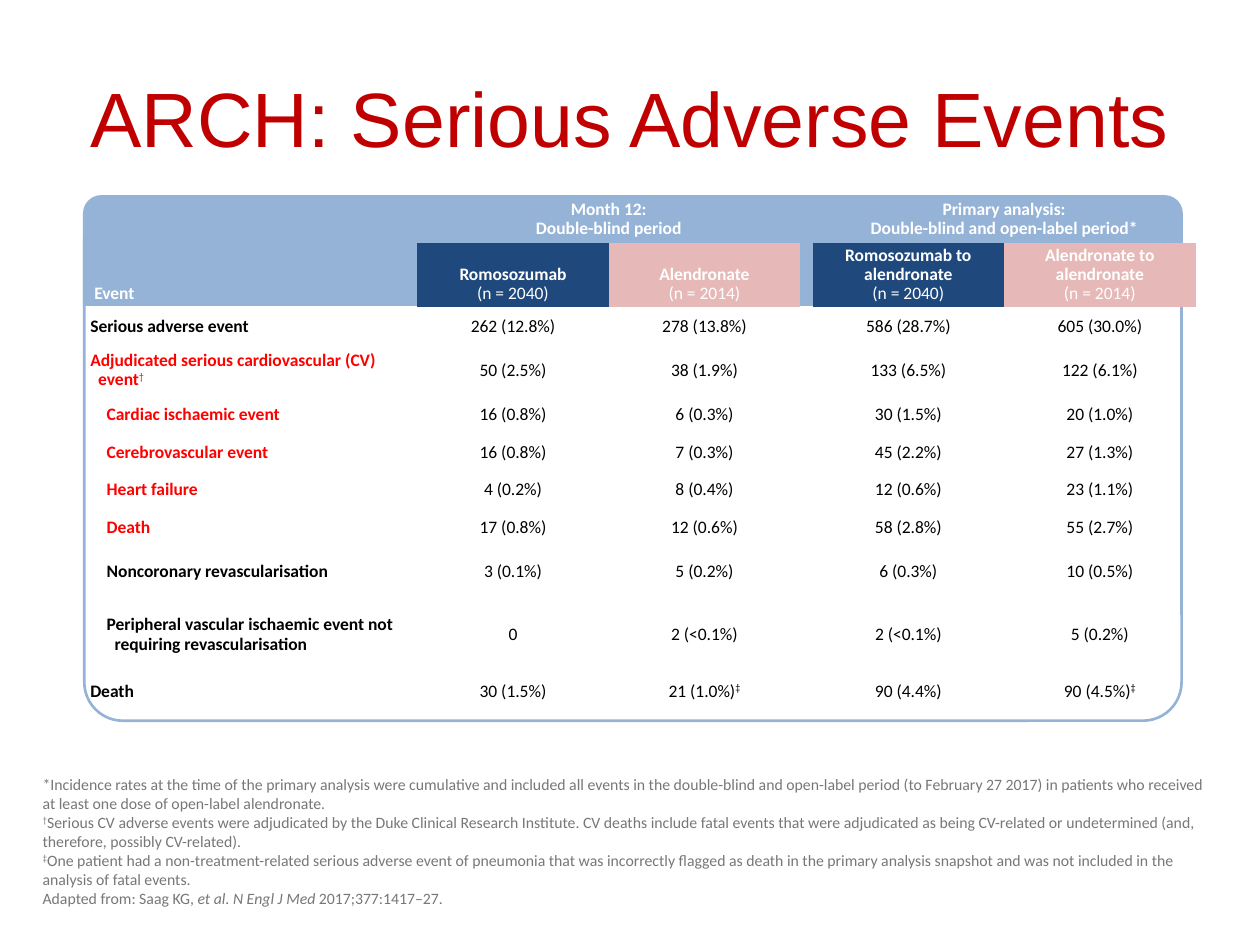
from itertools import groupby
from lxml.etree import SubElement
from pptx import Presentation
from pptx.dml.color import RGBColor
from pptx.enum.shapes import MSO_SHAPE as SHAPE
from pptx.enum.text import MSO_ANCHOR as ANCHOR, PP_ALIGN as ALIGN
from pptx.oxml.ns import qn
from pptx.util import Cm, Pt

COLORS = {
    "title": "C00000", "frame": "95B3D7", "romo": "1F497D", "alen": "E6B9B8",
    "white": "FFFFFF", "black": "000000", "red": "FF0000", "note": "777777",
}
NO_STYLE = "{2D5ABB26-0587-4C30-8999-92F81FD0307C}"
COL_WIDTHS = [6.76, 3.86, 3.86, 0.25, 3.86, 3.86]
ROW_HEIGHTS = [0.93, 1.3, 0.76, 1.02, 0.76, 0.76, 0.76, 0.76, 1.02, 1.52, 0.76]
VALUE_COLS = [1, 2, 4, 5]
PERIODS = [
    (1, "Month 12:\nDouble-blind period"),
    (4, "Primary analysis:\nDouble-blind and open-label period*"),
]
ARMS = [
    (["Romosozumab"], "(n = 2040)", "romo"),
    (["Alendronate"], "(n = 2014)", "alen"),
    (["Romosozumab to", "alendronate"], "(n = 2040)", "romo"),
    (["Alendronate to", "alendronate"], "(n = 2014)", "alen"),
]
EVENTS = [
    ("Serious adverse event", "black", 0, False,
     ["262 (12.8%)", "278 (13.8%)", "586 (28.7%)", "605 (30.0%)"]),
    ("Adjudicated serious cardiovascular (CV) event†", "red", 0, True,
     ["50 (2.5%)", "38 (1.9%)", "133 (6.5%)", "122 (6.1%)"]),
    ("Cardiac ischaemic event", "red", 1, False,
     ["16 (0.8%)", "6 (0.3%)", "30 (1.5%)", "20 (1.0%)"]),
    ("Cerebrovascular event", "red", 1, False,
     ["16 (0.8%)", "7 (0.3%)", "45 (2.2%)", "27 (1.3%)"]),
    ("Heart failure", "red", 1, False,
     ["4 (0.2%)", "8 (0.4%)", "12 (0.6%)", "23 (1.1%)"]),
    ("Death", "red", 1, False,
     ["17 (0.8%)", "12 (0.6%)", "58 (2.8%)", "55 (2.7%)"]),
    ("Noncoronary revascularisation", "black", 1, True,
     ["3 (0.1%)", "5 (0.2%)", "6 (0.3%)", "10 (0.5%)"]),
    ("Peripheral vascular ischaemic event not requiring revascularisation",
     "black", 1, True, ["0", "2 (<0.1%)", "2 (<0.1%)", "5 (0.2%)"]),
    ("Death", "black", 0, False,
     ["30 (1.5%)", "21 (1.0%)‡", "90 (4.4%)", "90 (4.5%)‡"]),
]
NOTES = (
    "*Incidence rates at the time of the primary analysis were cumulative and included all events "
    "in the double-blind and open-label period (to February 27 2017) in patients who received "
    "at least one dose of open-label alendronate.\n"
    "†Serious CV adverse events were adjudicated by the Duke Clinical Research Institute. "
    "CV deaths include fatal events that were adjudicated as being CV-related or undetermined "
    "(and, therefore, possibly CV-related).\n"
    "‡One patient had a non-treatment-related serious adverse event of pneumonia that was "
    "incorrectly flagged as death in the primary analysis snapshot and was not included in the "
    "analysis of fatal events."
)
CITATION = [("Adapted from: Saag KG, ", False), ("et al. N Engl J Med", True),
            (" 2017;377:1417–27.", False)]


def rgb(name):
    """Return the named colour."""
    return RGBColor.from_string(COLORS[name])


def add_run(p, text, size, color, bold=False, italic=False, font="Calibri"):
    """Add one formatted run to a paragraph."""
    r = p.add_run()
    r.text = text
    r.font.name, r.font.size = font, Pt(size)
    r.font.bold, r.font.italic = bold, italic
    r.font.color.rgb = rgb(color)
    return r


def add_text(p, text, size, color, bold=False):
    """Add text with line breaks and raised footnote marks."""
    for i, line in enumerate(text.split("\n")):
        if i:
            p.add_line_break()
        for is_mark, chars in groupby(line, key=lambda c: c in "†‡"):
            r = add_run(p, "".join(chars), size, color, bold and not is_mark)
            if is_mark:
                r.font._element.set("baseline", "30000")


def add_frame(s, kind, top, height, radius, filled):
    """Add a rounded panel of the table's frame."""
    sp = s.shapes.add_shape(kind, Cm(1.7), Cm(top), Cm(22.12), Cm(height))
    sp.shadow.inherit = False
    sp.adjustments[0] = radius
    sp.line.color.rgb = rgb("frame")
    sp.line.width = Pt(1.5)
    if filled:
        sp.fill.solid()
        sp.fill.fore_color.rgb = rgb("frame")
    else:
        sp.fill.background()


def set_margins(cell, left, right, vertical):
    """Set the inner margins of a cell in centimetres."""
    cell.margin_left, cell.margin_right = Cm(left), Cm(right)
    cell.margin_top = cell.margin_bottom = Cm(vertical)


def fill_cell(cell, lines, color, align=ALIGN.CENTER, header=False, left=0.17, hanging=False):
    """Write (text, bold) lines into a cell."""
    cell.vertical_anchor = ANCHOR.BOTTOM if header else ANCHOR.MIDDLE
    set_margins(cell, *((0.25, 0.25, 0.08) if header else (left, 0.17, 0)))
    tf = cell.text_frame
    for i, (text, bold) in enumerate(lines):
        p = tf.add_paragraph() if i else tf.paragraphs[0]
        p.alignment, p.line_spacing = align, 0.9
        if hanging:
            pPr = p._p.get_or_add_pPr()
            pPr.set("marL", str(Cm(0.16)))
            pPr.set("indent", str(-Cm(0.16)))
        add_text(p, text, 10, color, bold)


def add_event_table(s):
    """Add the table of adverse events."""
    frame = s.shapes.add_table(len(ROW_HEIGHTS), len(COL_WIDTHS), Cm(1.65), Cm(3.96),
                               Cm(sum(COL_WIDTHS)), Cm(sum(ROW_HEIGHTS)))
    table = frame.table
    table.first_row = table.horz_banding = False
    table._tbl.tblPr.find(qn("a:tableStyleId")).text = NO_STYLE
    for col, width in zip(table.columns, COL_WIDTHS):
        col.width = Cm(width)
    for row, height in zip(table.rows, ROW_HEIGHTS):
        row.height = Cm(height)
    for cell in table.iter_cells():
        cell.fill.background()

    table.cell(0, 0).merge(table.cell(1, 0))
    fill_cell(table.cell(0, 0), [("Event", True)], "white", ALIGN.LEFT, header=True)
    for col, text in PERIODS:
        table.cell(0, col).merge(table.cell(0, col + 1))
        fill_cell(table.cell(0, col), [(text, True)], "white", header=True)
    for col, (names, count, color) in zip(VALUE_COLS, ARMS):
        cell = table.cell(1, col)
        cell.fill.solid()
        cell.fill.fore_color.rgb = rgb(color)
        fill_cell(cell, [(name, True) for name in names] + [(count, False)], "white", header=True)

    for row, (label, color, level, hanging, values) in enumerate(EVENTS, 2):
        fill_cell(table.cell(row, 0), [(label, True)], color, ALIGN.LEFT,
                  left=0.5 if level else 0.17, hanging=hanging)
        for col, value in zip(VALUE_COLS, values):
            fill_cell(table.cell(row, col), [(value, False)], "black")

    for cell in table.iter_cells():
        if not cell.text_frame.text:
            set_margins(cell, 0, 0, 0)
            SubElement(cell.text_frame.paragraphs[0]._p, qn("a:endParaRPr"), sz="1000")


def add_title(s, text):
    """Place and format the title."""
    sp = s.shapes.title
    sp.left, sp.top, sp.width, sp.height = Cm(1.27), Cm(0.76), Cm(22.86), Cm(3.18)
    tf = sp.text_frame
    tf.vertical_anchor = ANCHOR.MIDDLE
    p = tf.paragraphs[0]
    p.alignment = ALIGN.CENTER
    add_run(p, text, 44, "title", font="Arial")


def add_notes(s):
    """Add the footnotes and the citation."""
    tf = s.shapes.add_textbox(Cm(0.61), Cm(15.6), Cm(23.98), Cm(2.82)).text_frame
    tf.word_wrap = True
    tf.vertical_anchor = ANCHOR.BOTTOM
    add_text(tf.paragraphs[0], NOTES, 9, "note")
    p = tf.add_paragraph()
    for text, italic in CITATION:
        add_run(p, text, 9, "note", italic=italic)


def main():
    """Build and save the slide."""
    prs = Presentation()
    prs.slide_width, prs.slide_height = Cm(25.4), Cm(19.05)
    s = prs.slides.add_slide(prs.slide_layouts[5])
    add_frame(s, SHAPE.ROUND_2_SAME_RECTANGLE, 3.96, 2.18, 0.157, True)
    add_frame(s, SHAPE.ROUNDED_RECTANGLE, 4.04, 10.49, 0.074, False)
    add_title(s, "ARCH: Serious Adverse Events")
    add_notes(s)
    add_event_table(s)
    prs.save("out.pptx")


if __name__ == "__main__":
    main()
